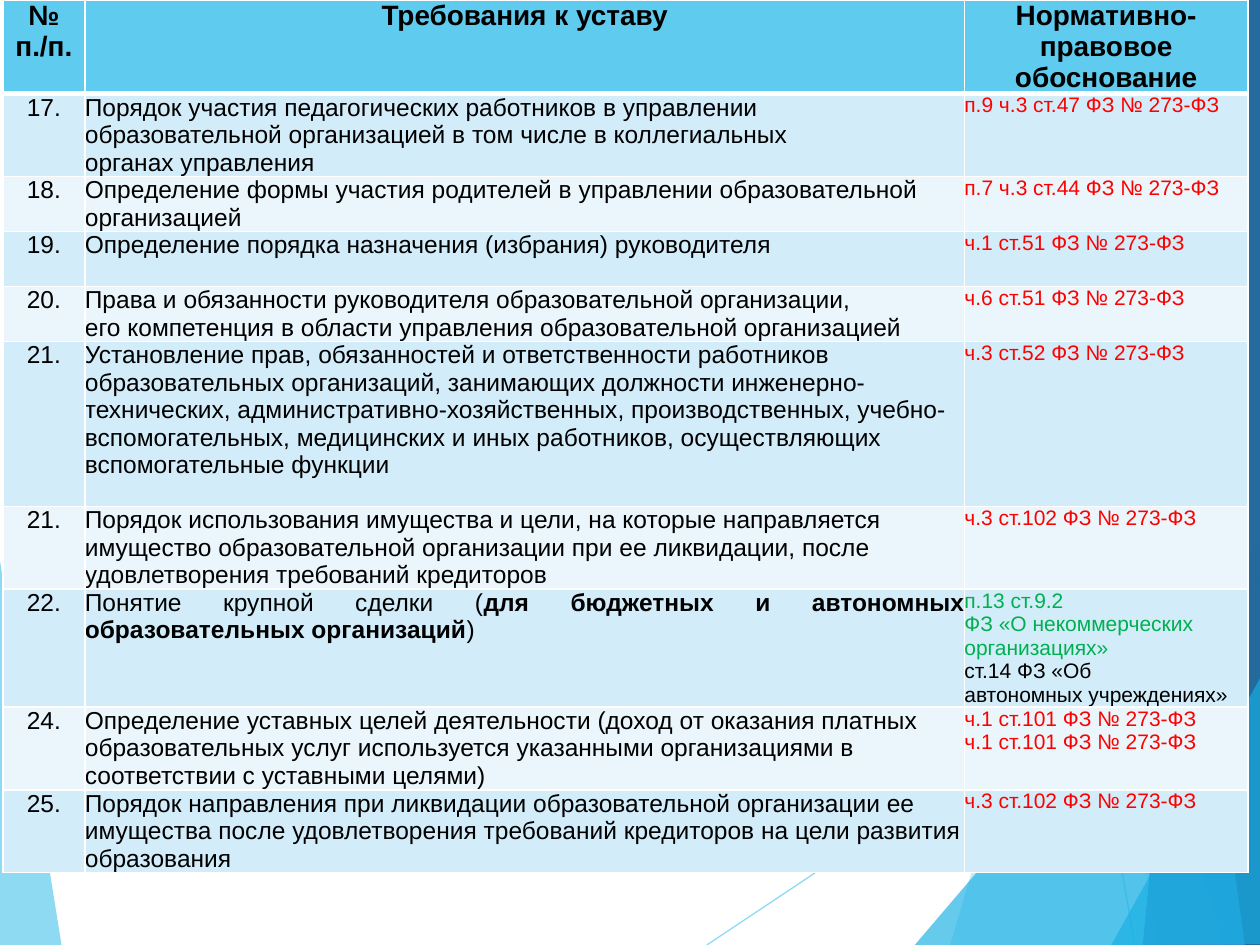
from lxml import etree
from pptx import Presentation
from pptx import util as u
from pptx.dml.color import RGBColor
from pptx.enum import shapes, text
from pptx.oxml.ns import qn

FONT = "Arial"
COLORS = {
    "sky": "5FCBEF", "azure": "17B0E4", "blue": "2E83C3", "navy": "226292",
    "dark band": "D2ECF9", "light band": "EAF6FC", "white": "FFFFFF",
    "black": "000000", "red": "FF0000", "green": "00B050",
}
LEFT, CENTER, JUSTIFY = (text.PP_ALIGN.LEFT, text.PP_ALIGN.CENTER,
                         text.PP_ALIGN.JUSTIFY)

# Background facets: colour, opacity in percent, corners in points
FACETS_LEFT = [("sky", 70, [(-0.7, 316), (35.3, 540.7), (-0.7, 540)])]
RAYS = [((403.9, 540), (720.7, 329)), ((554.4, 0), (648.5, 540))]
FACETS_RIGHT = [
    ("sky", 36, [(702, 0), (542.9, 540), (721.4, 540.7), (720.7, 0.7)]),
    ("sky", 20, [(567.4, -0.7), (661.7, 540), (720.7, 540), (720.7, -0.7)]),
    ("azure", 66, [(522.7, 540), (720, 308.9), (720.7, 540)]),
    ("azure", 50, [(552.2, -0.7), (698.4, 540), (720.7, 539.3), (720.7, -0.7)]),
    ("blue", 70, [(706.3, -0.7), (653, 540), (720.7, 540), (720, -0.7)]),
    ("navy", 82, [(637.2, -0.7), (711.4, 540), (721.4, 540), (720, -0.7)]),
    ("azure", 66, [(635, 540), (721.4, 385.2), (721.4, 539.3)]),
]

# Table content
TABLE_LEFT, TABLE_TOP = 1.7, 0
COLUMN_WIDTHS = [46.8, 502.6, 162]
HEADER_HEIGHT, LINE_HEIGHT = 53.6, 15.7
HEADER = [["№", "п./п."], ["Требования к уставу"],
          ["Нормативно-правовое обоснование"]]
# Number, height in lines, alignment, requirement paragraphs, legal basis.
# A requirement paragraph may be a list of (words, bold) runs.
ROWS = [
    ("17.", 3, JUSTIFY,
     ["Порядок участия педагогических работников в управлении",
      "образовательной организацией в том числе в коллегиальных",
      "органах управления"],
     [("п.9 ч.3 ст.47 ФЗ № 273-ФЗ", "red")]),
    ("18.", 2, JUSTIFY,
     ["Определение формы участия родителей в управлении образовательной",
      "организацией"],
     [("п.7 ч.3 ст.44 ФЗ № 273-ФЗ", "red")]),
    ("19.", 2, JUSTIFY,
     ["Определение порядка назначения (избрания) руководителя"],
     [("ч.1 ст.51 ФЗ № 273-ФЗ", "red")]),
    ("20.", 2, JUSTIFY,
     ["Права и обязанности руководителя образовательной организации,",
      "его компетенция в области управления образовательной организацией"],
     [("ч.6 ст.51 ФЗ № 273-ФЗ", "red")]),
    ("21.", 6, LEFT,
     ["Установление прав, обязанностей и ответственности работников "
      "образовательных организаций, занимающих должности "
      "инженерно-технических, административно-хозяйственных, "
      "производственных, учебно-вспомогательных, медицинских и иных "
      "работников, осуществляющих вспомогательные функции"],
     [("ч.3 ст.52 ФЗ № 273-ФЗ", "red")]),
    ("21.", 3, LEFT,
     ["Порядок использования имущества и цели, на которые направляется "
      "имущество образовательной организации при ее ликвидации, после "
      "удовлетворения требований кредиторов"],
     [("ч.3 ст.102 ФЗ № 273-ФЗ", "red")]),
    ("22.", 4.3, JUSTIFY,
     [[("Понятие крупной сделки (", False),
       ("для бюджетных и автономных образовательных организаций", True),
       (")", False)]],
     [("п.13 ст.9.2", "green"),
      ("ФЗ «О некоммерческих организациях»", "green"),
      ("ст.14 ФЗ «Об", "black"),
      ("автономных учреждениях»", "black")]),
    ("24.", 3, LEFT,
     ["Определение уставных целей деятельности (доход от оказания платных "
      "образовательных услуг используется указанными организациями в "
      "соответствии с уставными целями)"],
     [("ч.1 ст.101 ФЗ № 273-ФЗ", "red"), ("ч.1 ст.101 ФЗ № 273-ФЗ", "red")]),
    ("25.", 3, LEFT,
     ["Порядок направления при ликвидации образовательной организации ее "
      "имущества после удовлетворения требований кредиторов на цели развития "
      "образования"],
     [("ч.3 ст.102 ФЗ № 273-ФЗ", "red")]),
]


def rgb(name):
    return RGBColor.from_string(COLORS[name])


def set_opacity(parent, percent):
    for color in parent.iter(qn("a:srgbClr")):
        etree.SubElement(color, qn("a:alpha"), val=str(percent * 1000))


def add_facet(slide, color, opacity, corners):
    points = [(u.Pt(x), u.Pt(y)) for x, y in corners]
    builder = slide.shapes.build_freeform(*points[0])
    builder.add_line_segments(points[1:], close=True)
    shape = builder.convert_to_shape()
    shape.shadow.inherit = False
    shape.line.fill.background()
    shape.fill.solid()
    shape.fill.fore_color.rgb = rgb(color)
    set_opacity(shape.fill._xPr, opacity)


def add_ray(slide, start, end):
    connector = slide.shapes.add_connector(
        shapes.MSO_CONNECTOR.STRAIGHT, *[u.Pt(v) for v in start + end])
    connector.line.color.rgb = rgb("sky")
    connector.line.width = u.Pt(0.75)
    properties = connector._element.spPr
    set_opacity(properties, 70)
    etree.SubElement(properties, qn("a:effectLst"))


def style_cell(cell, fill, bottom_width=1):
    cell.margin_left = cell.margin_right = 0
    cell.margin_top = cell.margin_bottom = 0
    properties = cell._tc.get_or_add_tcPr()
    for side, width in (("L", 1), ("R", 1), ("T", 1), ("B", bottom_width)):
        border = etree.SubElement(properties, qn(f"a:ln{side}"),
                                  w=str(u.Pt(width)))
        solid = etree.SubElement(border, qn("a:solidFill"))
        etree.SubElement(solid, qn("a:srgbClr"), val=COLORS["white"])
    cell.fill.solid()
    cell.fill.fore_color.rgb = rgb(fill)


def write_cell(cell, paragraphs, size, alignment):
    """Each paragraph is a list of (words, bold, colour) runs."""
    frame = cell.text_frame
    for index, runs in enumerate(paragraphs):
        paragraph = frame.add_paragraph() if index else frame.paragraphs[0]
        paragraph.alignment = alignment
        for words, bold, color in runs:
            run = paragraph.add_run()
            run.text = words
            run.font.name = FONT
            run.font.size = u.Pt(size)
            run.font.bold = bold
            run.font.color.rgb = rgb(color)


def add_requirements_table(slide):
    heights = [HEADER_HEIGHT] + [row[1] * LINE_HEIGHT for row in ROWS]
    table = slide.shapes.add_table(
        len(heights), len(COLUMN_WIDTHS), u.Pt(TABLE_LEFT), u.Pt(TABLE_TOP),
        u.Pt(sum(COLUMN_WIDTHS)), u.Pt(sum(heights))).table
    table.horz_banding = False
    for column, width in zip(table.columns, COLUMN_WIDTHS):
        column.width = u.Pt(width)
    for row, height in zip(table.rows, heights):
        row.height = u.Pt(height)

    # Header row
    for column, lines in enumerate(HEADER):
        cell = table.cell(0, column)
        style_cell(cell, "sky", bottom_width=3)
        write_cell(cell, [[(line, True, "black")] for line in lines], 16, CENTER)

    # Body rows
    for index, (number, _, alignment, requirement, basis) in enumerate(ROWS, 1):
        cells = [table.cell(index, column) for column in range(3)]
        for cell in cells:
            style_cell(cell, "dark band" if index % 2 else "light band")
        run_lists = [[(item, False)] if isinstance(item, str) else item
                     for item in requirement]
        write_cell(cells[0], [[(number, False, "black")]], 14, CENTER)
        write_cell(cells[1], [[(words, bold, "black") for words, bold in runs]
                              for runs in run_lists], 14, alignment)
        write_cell(cells[2], [[(words, False, color)] for words, color in basis],
                   12, LEFT)


def main():
    presentation = Presentation()
    presentation.slide_width, presentation.slide_height = u.Pt(720), u.Pt(540)
    slide = presentation.slides.add_slide(presentation.slide_layouts[6])
    for facet in FACETS_LEFT:
        add_facet(slide, *facet)
    for ray in RAYS:
        add_ray(slide, *ray)
    for facet in FACETS_RIGHT:
        add_facet(slide, *facet)
    add_requirements_table(slide)
    presentation.save("out.pptx")


if __name__ == "__main__":
    main()
